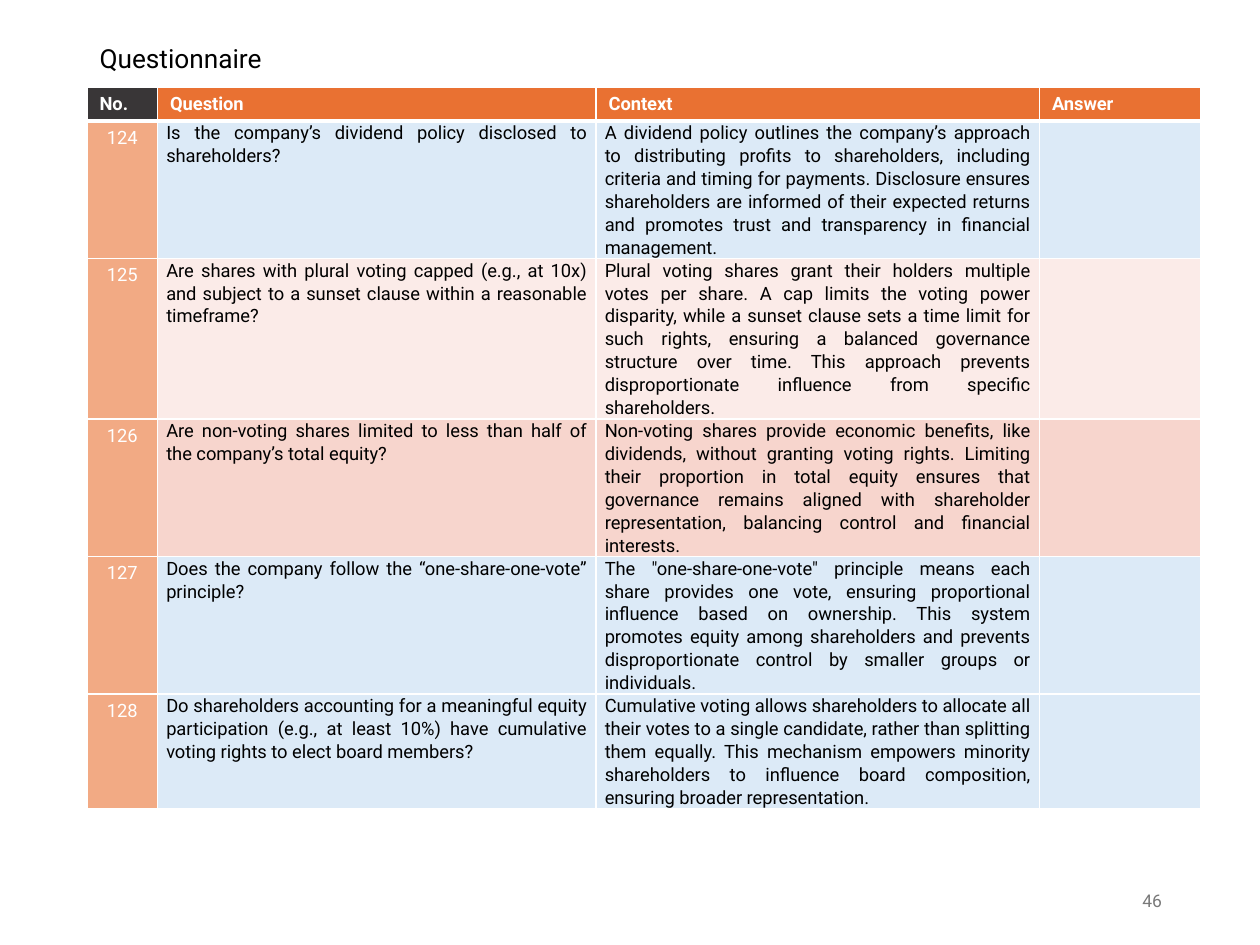
"""Build the questionnaire slide with questions 124 to 128."""
from lxml import etree
from pptx import Presentation
from pptx.dml.color import RGBColor
from pptx.enum.text import MSO_ANCHOR as ANCHOR, PP_ALIGN as ALIGN
from pptx.oxml.ns import qn
from pptx.util import Inches, Pt

FONT = "Roboto"
BLACK = RGBColor(0x00, 0x00, 0x00)
WHITE = RGBColor(0xFF, 0xFF, 0xFF)
GREY = RGBColor(0x79, 0x79, 0x79)
DARK = RGBColor(0x39, 0x36, 0x37)
ORANGE = RGBColor(0xE9, 0x71, 0x32)
PEACH = RGBColor(0xF2, 0xAA, 0x84)
BLUE = RGBColor(0xDC, 0xEA, 0xF7)
PALE_PINK = RGBColor(0xFB, 0xEB, 0xE8)
PINK = RGBColor(0xF7, 0xD5, 0xCD)

HEADERS = ["No.", "Question", "Context", "Answer"]
WIDTHS = [0.56, 3.48, 3.52, 1.28]
FIRST_NUMBER = 124
QUESTIONS = [
    (BLUE,
     "Is the company’s dividend policy disclosed to shareholders?",
     "A dividend policy outlines the company’s approach to distributing profits to "
     "shareholders, including criteria and timing for payments. Disclosure ensures "
     "shareholders are informed of their expected returns and promotes trust and "
     "transparency in financial management."),
    (PALE_PINK,
     "Are shares with plural voting capped (e.g., at 10x) and subject to a sunset "
     "clause within a reasonable timeframe?",
     "Plural voting shares grant their holders multiple votes per share. A cap limits "
     "the voting power disparity, while a sunset clause sets a time limit for such "
     "rights, ensuring a balanced governance structure over time. This approach "
     "prevents disproportionate influence from specific shareholders."),
    (PINK,
     "Are non-voting shares limited to less than half of the company’s total equity?",
     "Non-voting shares provide economic benefits, like dividends, without granting "
     "voting rights. Limiting their proportion in total equity ensures that governance "
     "remains aligned with shareholder representation, balancing control and financial "
     "interests."),
    (BLUE,
     "Does the company follow the “one-share-one-vote” principle?",
     'The "one-share-one-vote" principle means each share provides one vote, ensuring '
     "proportional influence based on ownership. This system promotes equity among "
     "shareholders and prevents disproportionate control by smaller groups or "
     "individuals."),
    (BLUE,
     "Do shareholders accounting for a meaningful equity participation (e.g., at least "
     "10%) have cumulative voting rights to elect board members?",
     "Cumulative voting allows shareholders to allocate all their votes to a single "
     "candidate, rather than splitting them equally. This mechanism empowers minority "
     "shareholders to influence board composition, ensuring broader representation."),
]


def set_text(tf, text, size, color, align=ALIGN.LEFT, bold=False):
    tf.text = text
    p = tf.paragraphs[0]
    p.alignment = align
    p.font.name = FONT
    p.font.size = Pt(size)
    p.font.bold = bold
    p.font.color.rgb = color
    return p


def style_cell(cell, fill, bottom=1):
    tc_pr = cell._tc.get_or_add_tcPr()
    for side, width in (("L", 1), ("R", 1), ("T", 1), ("B", bottom)):
        ln = etree.SubElement(tc_pr, qn(f"a:ln{side}"), w=str(Pt(width)))
        solid = etree.SubElement(ln, qn("a:solidFill"))
        etree.SubElement(solid, qn("a:srgbClr"), val=str(WHITE))
    cell.fill.solid()
    cell.fill.fore_color.rgb = fill


prs = Presentation()
prs.slide_width, prs.slide_height = Inches(10), Inches(7.5)
s = prs.slides.add_slide(prs.slide_layouts[5])

title = s.shapes.title
title.left, title.top = Inches(0.69), Inches(0.27)
title.width, title.height = Inches(8.62), Inches(0.42)
title.text_frame.vertical_anchor = ANCHOR.MIDDLE
p = set_text(title.text_frame, "Questionnaire", 15, BLACK)
p.line_spacing = 0.9

frame = s.shapes.add_table(len(QUESTIONS) + 1, len(HEADERS), Inches(0.69),
                           Inches(0.69), Inches(8.84), Inches(5.49))
table = frame.table
for column, width in zip(table.columns, WIDTHS):
    column.width = Inches(width)
for row in table.rows:
    row.height = Inches(0.22)
frame.height = Inches(5.49)

for col, header in enumerate(HEADERS):
    cell = table.cell(0, col)
    style_cell(cell, ORANGE if col else DARK, bottom=3)
    set_text(cell.text_frame, header, 10.5, WHITE, bold=True)

for row, (fill, question, context) in enumerate(QUESTIONS, start=1):
    number = table.cell(row, 0)
    style_cell(number, PEACH)
    set_text(number.text_frame, str(FIRST_NUMBER + row - 1), 10.5, WHITE, ALIGN.CENTER)
    for col, text in enumerate((question, context), start=1):
        cell = table.cell(row, col)
        style_cell(cell, fill)
        cell.margin_left = cell.margin_right = Inches(0.07)
        cell.margin_top = cell.margin_bottom = 0
        p = set_text(cell.text_frame, text, 10.5, BLACK, ALIGN.JUSTIFY)
        p.line_spacing = 1.07
        p.space_after = Pt(2)
    style_cell(table.cell(row, 3), fill)

page = s.shapes.add_textbox(Inches(6.58), Inches(6.95), Inches(2.74), Inches(0.4))
tf = page.text_frame
tf.word_wrap = True
tf.vertical_anchor = ANCHOR.MIDDLE
set_text(tf, "46", 10, GREY, ALIGN.RIGHT)

prs.save("out.pptx")
